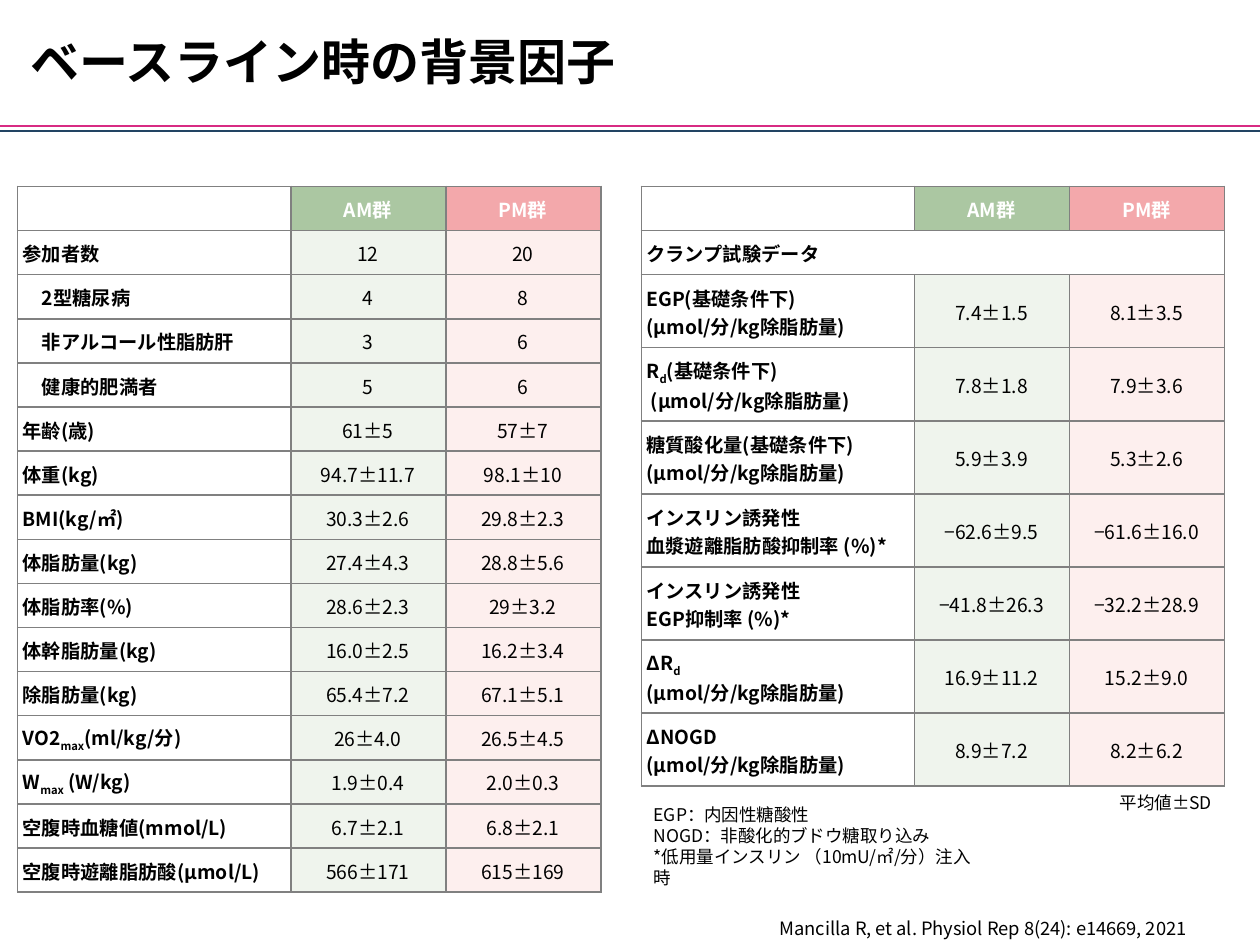
from dataclasses import dataclass

import pptx
import pptx.dml.color
import pptx.enum.shapes
import pptx.enum.text
import pptx.oxml
import pptx.oxml.ns
import pptx.util
from pptx.util import Inches

ALIGN = pptx.enum.text.PP_ALIGN
ANCHOR = pptx.enum.text.MSO_ANCHOR


@dataclass(frozen=True)
class Theme:
    font: str = "Noto Sans CJK JP"
    black: str = "000000"
    white: str = "FFFFFF"
    navy: str = "224463"
    pink: str = "D82B83"
    grid: str = "808080"
    heads: tuple = ("ABC7A2", "F3A8AB")
    tints: tuple = ("EFF4ED", "FDEFEE")
    title: float = 28
    cell: float = 11
    cite: float = 10.5
    note: float = 10


T = Theme()
UNIT = "(μmol/分/kg除脂肪量)"
GROUPS = ("AM群", "PM群")

# Text between tildes is set as a subscript.
BACKGROUND = [
    ("参加者数", "12", "20"),
    ("\u30002型糖尿病".replace("\u3000", "　"), "4", "8"),
    ("　非アルコール性脂肪肝", "3", "6"),
    ("　健康的肥満者", "5", "6"),
    ("年齢(歳)", "61±5", "57±7"),
    ("体重(kg)", "94.7±11.7", "98.1±10"),
    ("BMI(kg/㎡)", "30.3±2.6", "29.8±2.3"),
    ("体脂肪量(kg)", "27.4±4.3", "28.8±5.6"),
    ("体脂肪率(%)", "28.6±2.3", "29±3.2"),
    ("体幹脂肪量(kg)", "16.0±2.5", "16.2±3.4"),
    ("除脂肪量(kg)", "65.4±7.2", "67.1±5.1"),
    ("VO2~max~(ml/kg/分)", "26±4.0", "26.5±4.5"),
    ("W~max~ (W/kg)", "1.9±0.4", "2.0±0.3"),
    ("空腹時血糖値(mmol/L)", "6.7±2.1", "6.8±2.1"),
    ("空腹時遊離脂肪酸(µmol/L)", "566±171", "615±169"),
]
CLAMP = [
    ("クランプ試験データ",),
    ("EGP(基礎条件下)\n" + UNIT, "7.4±1.5", "8.1±3.5"),
    ("R~d~(基礎条件下)\n " + UNIT, "7.8±1.8", "7.9±3.6"),
    ("糖質酸化量(基礎条件下)\n" + UNIT, "5.9±3.9", "5.3±2.6"),
    ("インスリン誘発性\n血漿遊離脂肪酸抑制率 (%)*", "−62.6±9.5", "−61.6±16.0"),
    ("インスリン誘発性\nEGP抑制率 (%)*", "−41.8±26.3", "−32.2±28.9"),
    ("ΔR~d~\n" + UNIT, "16.9±11.2", "15.2±9.0"),
    ("ΔNOGD\n" + UNIT, "8.9±7.2", "8.2±6.2"),
]


def rgb(color):
    return pptx.dml.color.RGBColor.from_string(color)


def write(tf, text, size, color=T.black, bold=False, align=ALIGN.LEFT):
    """Fill a text frame, one paragraph a line, with ~subscripts~."""
    for i, line in enumerate(text.split("\n")):
        p = tf.add_paragraph() if i else tf.paragraphs[0]
        p.alignment = align
        f = p.font
        f.name, f.size, f.bold = T.font, pptx.util.Pt(size), bold
        f.color.rgb = rgb(color)
        ea = pptx.oxml.parse_xml(
            f'<a:ea {pptx.oxml.ns.nsdecls("a")} typeface="{T.font}"/>')
        f._element.find(pptx.oxml.ns.qn("a:latin")).addnext(ea)
        for j, part in enumerate(line.split("~")):
            if part:
                r = p.add_run()
                r.text = part
                if j % 2:
                    r.font._element.set("baseline", "-25000")


def add_text(s, text, size, left, top, width, height, anchor=ANCHOR.TOP):
    tf = s.shapes.add_textbox(*map(Inches, (left, top, width, height))).text_frame
    tf.word_wrap = True
    tf.vertical_anchor = anchor
    write(tf, text, size)


def add_title(s, text):
    sp = s.shapes.title
    sp.left, sp.top, sp.width, sp.height = map(Inches, (0.14, 0.2, 8.6, 0.57))
    sp.text_frame.vertical_anchor = ANCHOR.MIDDLE
    write(sp.text_frame, text, T.title, bold=True)


def add_rule(s, y, color):
    ln = s.shapes.add_connector(pptx.enum.shapes.MSO_CONNECTOR.STRAIGHT,
                                0, Inches(y), Inches(10), Inches(y))
    ln.line.color.rgb = rgb(color)
    ln.line.width = pptx.util.Pt(1.5)
    ln._element.spPr.append(pptx.oxml.parse_xml(
        f'<a:effectLst {pptx.oxml.ns.nsdecls("a")}/>'))


def add_borders(cell):
    tcPr = cell._tc.get_or_add_tcPr()
    for i, side in enumerate(("lnL", "lnR", "lnT", "lnB")):
        tcPr.insert(i, pptx.oxml.parse_xml(
            f'<a:{side} {pptx.oxml.ns.nsdecls("a")} w="12700"><a:solidFill>'
            f'<a:srgbClr val="{T.grid}"/></a:solidFill></a:{side}>'))


def format_cell(cell, text, fill=None, **style):
    cell.margin_left = Inches(0 if fill else 0.04)
    cell.margin_right = cell.margin_top = Inches(0.01)
    cell.margin_bottom = 0
    cell.vertical_anchor = ANCHOR.MIDDLE
    if fill:
        cell.fill.solid()
        cell.fill.fore_color.rgb = rgb(fill)
        style["align"] = ALIGN.CENTER
    else:
        cell.fill.background()
    write(cell.text_frame, text, T.cell, **style)
    add_borders(cell)


def add_group_table(s, left, rows):
    """Add a table of a label column and one column a group."""
    heights = [0.35] + [0.58 if "\n" in row[0] else 0.35 for row in rows]
    widths = (2.17, 1.23, 1.23)
    tbl = s.shapes.add_table(len(heights), len(widths), Inches(left), Inches(1.48),
                             Inches(sum(widths)), Inches(sum(heights))).table
    tbl.first_row = tbl.horz_banding = False
    for col, width in zip(tbl.columns, widths):
        col.width = Inches(width)
    for row, height in zip(tbl.rows, heights):
        row.height = Inches(height)

    format_cell(tbl.cell(0, 0), "")
    for c, (name, fill) in enumerate(zip(GROUPS, T.heads), 1):
        format_cell(tbl.cell(0, c), name, fill, color=T.white, bold=True)
    for i, (label, *values) in enumerate(rows, 1):
        format_cell(tbl.cell(i, 0), label, bold=True)
        for c, (value, fill) in enumerate(zip(values, T.tints), 1):
            format_cell(tbl.cell(i, c), value, fill)
        if not values:
            for c in (1, 2):
                add_borders(tbl.cell(i, c))
            tbl.cell(i, 0).merge(tbl.cell(i, 2))


def main():
    prs = pptx.Presentation()
    prs.slide_width, prs.slide_height = Inches(10), Inches(7.5)
    s = prs.slides.add_slide(prs.slide_layouts[5])
    add_rule(s, 1.04, T.navy)
    add_rule(s, 1, T.pink)
    add_title(s, "ベースライン時の背景因子")
    add_text(s, "Mancilla R, et al. Physiol Rep 8(24): e14669, 2021", T.cite,
             6.09, 7.22, 3.91, 0.28, ANCHOR.BOTTOM)
    add_group_table(s, 0.14, BACKGROUND)
    add_group_table(s, 5.09, CLAMP)
    add_text(s, "平均値±SD", T.note, 8.79, 6.24, 0.93, 0.27)
    add_text(s, "EGP：内因性糖酸性\nNOGD：非酸化的ブドウ糖取り込み\n"
             "*低用量インスリン （10mU/㎡/分）注入時", T.note, 5.09, 6.33, 2.78, 0.61)
    prs.save("out.pptx")


if __name__ == "__main__":
    main()
